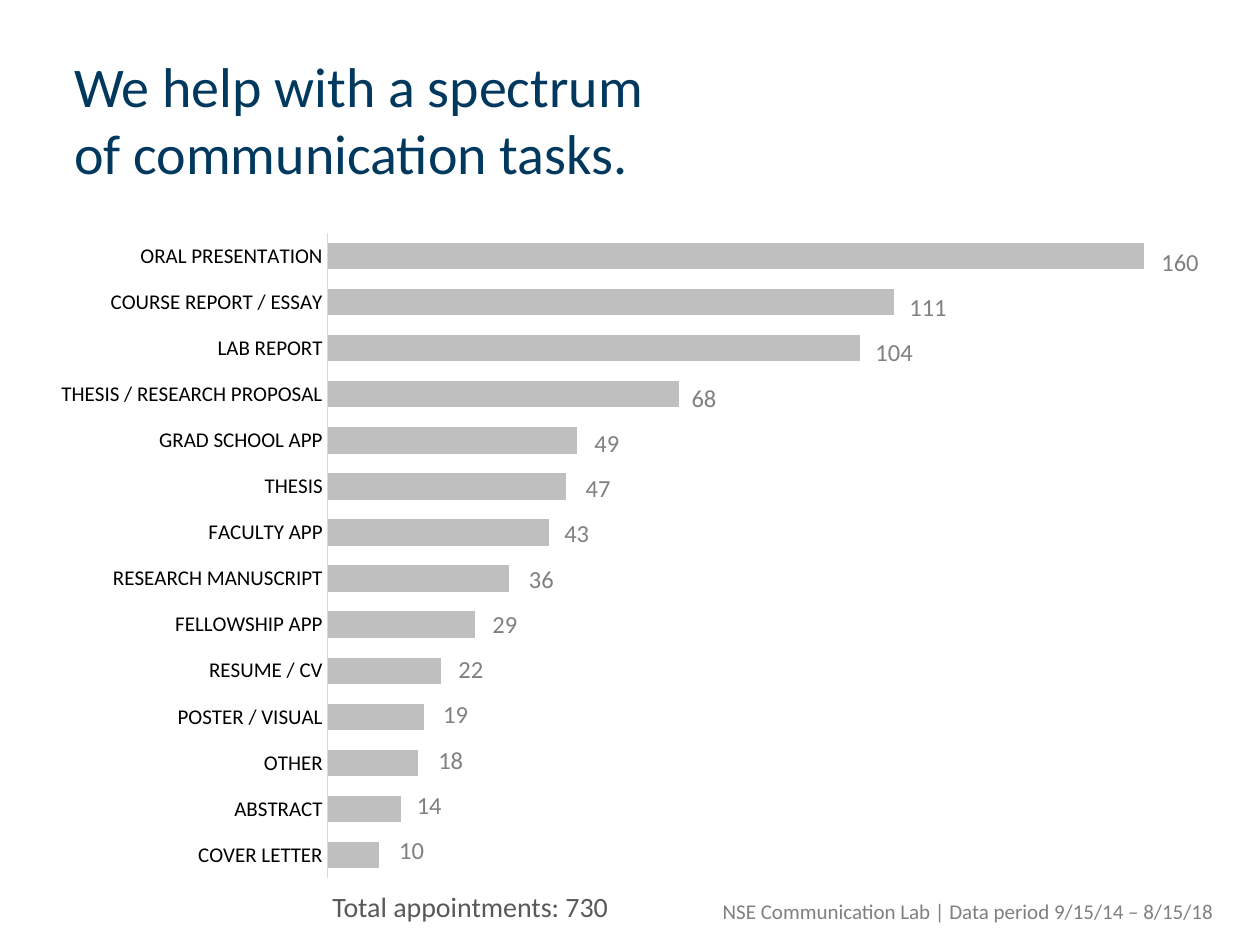
import dataclasses

import lxml.etree
import pptx
import pptx.chart.data
import pptx.dml.color
import pptx.enum.chart
import pptx.enum.text
import pptx.oxml
import pptx.oxml.ns
import pptx.util

Pt = pptx.util.Pt
RGB = pptx.dml.color.RGBColor
ALIGN = pptx.enum.text.PP_ALIGN

NAVY = RGB(0x01, 0x39, 0x5E)
BLACK = RGB(0, 0, 0)
DARK = RGB(0x59, 0x59, 0x59)
GRAY = RGB(0x80, 0x80, 0x80)
SILVER = RGB(0xBF, 0xBF, 0xBF)
PALE = RGB(0xD9, 0xD9, 0xD9)
FONT = "Calibri"

WIDE, HIGH = 644.4, 383.8  # chart size
LABEL_TOP = 137.5
LABEL_STEP = 25.86


@dataclasses.dataclass
class Task:
    name: str
    vals: tuple  # stacked bar values
    total: int  # number shown beside the bar
    left: float  # left edge of that number


@dataclasses.dataclass
class Note:
    text: str
    left: float
    top: float
    width: float
    height: float
    size: float
    color: RGB
    align: ALIGN = ALIGN.LEFT


TASKS = [
    Task("ORAL PRESENTATION", (97, 22, 25), 160, 656.6),
    Task("COURSE REPORT / ESSAY", (100, None, None), 111, 512.6),
    Task("LAB REPORT", (94, None, None), 104, 493.2),
    Task("THESIS / RESEARCH PROPOSAL", (23, 39, None), 68, 388.1),
    Task("GRAD SCHOOL APP", (44, None, None), 49, 332.6),
    Task("THESIS", (42, None, None), 47, 327.6),
    Task("FACULTY APP", (39, None, None), 43, 315.4),
    Task("RESEARCH MANUSCRIPT", (32, None, None), 36, 295.2),
    Task("FELLOWSHIP APP", (26, None, None), 29, 274.3),
    Task("RESUME / CV", (20, None, None), 22, 254.9),
    Task("POSTER / VISUAL", (17, None, None), 19, 246.2),
    Task("OTHER", (16, None, None), 18, 243.4),
    Task("ABSTRACT", (13, None, None), 14, 231.1),
    Task("COVER LETTER", (9, None, None), 10, 221),
]

TITLE = Note("We help with a spectrum\vof communication tasks.",
             35.3, 25.9, 644.4, 85, 32, NAVY)
NOTES = [
    Note("NSE Communication Lab | Data period 9/15/14 – 8/15/18",
         348.5, 509.8, 352, 21.8, 12, GRAY, ALIGN.RIGHT),
    Note("Total appointments: 730", 182.9, 504.7, 187.2, 26.6, 16, DARK),
]


def add_note(slide, note: Note) -> None:
    box = slide.shapes.add_textbox(
        Pt(note.left), Pt(note.top), Pt(note.width), Pt(note.height))
    frame = box.text_frame
    frame.word_wrap = True
    frame.auto_size = pptx.enum.text.MSO_AUTO_SIZE.SHAPE_TO_FIT_TEXT
    frame.text = note.text
    para = frame.paragraphs[0]
    para.alignment = note.align
    for run in para.runs:
        run.font.name = FONT
        run.font.size = Pt(note.size)
        run.font.color.rgb = note.color


def set_plot(chart, left: float, top: float, width: float, height: float) -> None:
    """Fix the inner plot area, in points within the chart."""
    area = chart._chartSpace.chart.plotArea
    qn = pptx.oxml.ns.qn
    for old in area.findall(qn("c:layout")):
        area.remove(old)
    layout = lxml.etree.Element(qn("c:layout"))
    manual = lxml.etree.SubElement(layout, qn("c:manualLayout"))
    rules = [("layoutTarget", "inner"), ("xMode", "edge"), ("yMode", "edge"),
             ("x", left / WIDE), ("y", top / HIGH),
             ("w", width / WIDE), ("h", height / HIGH)]
    for tag, value in rules:
        lxml.etree.SubElement(manual, qn("c:" + tag)).set("val", str(value))
    area.insert(0, layout)


def add_bars(slide, tasks: list[Task]) -> None:
    rows = tasks[::-1]  # bar charts run from the bottom up
    data = pptx.chart.data.CategoryChartData()
    data.categories = [row.name for row in rows]
    for i, vals in enumerate(zip(*(row.vals for row in rows)), 1):
        data.add_series(f"Series {i}", vals)
    chart = slide.shapes.add_chart(
        pptx.enum.chart.XL_CHART_TYPE.BAR_STACKED,
        Pt(22.3), Pt(126), Pt(WIDE), Pt(HIGH), data).chart
    chart.has_legend = False
    chart.has_title = False
    chart.font.name = FONT
    chart.font.size = Pt(10)
    chart.font.color.rgb = BLACK

    # Bars
    plot = chart.plots[0]
    plot.gap_width = 75
    plot.overlap = 100
    plot.vary_by_categories = False
    for series in plot.series:
        series.format.fill.solid()
        series.format.fill.fore_color.rgb = SILVER

    # Axes
    axis = chart.category_axis
    none = pptx.enum.chart.XL_TICK_MARK.NONE
    axis.major_tick_mark = none
    axis.minor_tick_mark = none
    axis.has_major_gridlines = False
    axis.format.line.color.rgb = PALE
    axis.format.line.width = Pt(0.75)
    axis.tick_labels.font.name = FONT
    axis.tick_labels.font.size = Pt(12)
    axis.tick_labels.font.color.rgb = BLACK
    scale = chart.value_axis
    scale.minimum_scale = 0
    scale.maximum_scale = 144
    scale.has_major_gridlines = False
    scale.visible = False
    set_plot(chart, 165, 7.2, 466.3, 368.6)


def main() -> None:
    deck = pptx.Presentation()
    deck.slide_width = Pt(720)
    deck.slide_height = Pt(540)
    slide = deck.slides.add_slide(deck.slide_layouts[6])

    # Title and chart
    add_note(slide, TITLE)
    add_bars(slide, TASKS)

    # Footer
    for note in NOTES:
        add_note(slide, note)

    # Totals beside the bars
    for i, task in enumerate(TASKS):
        add_note(slide, Note(str(task.total), task.left, LABEL_TOP + i * LABEL_STEP,
                             38.9, 24.5, 14, GRAY))
    deck.save("out.pptx")


if __name__ == "__main__":
    main()
